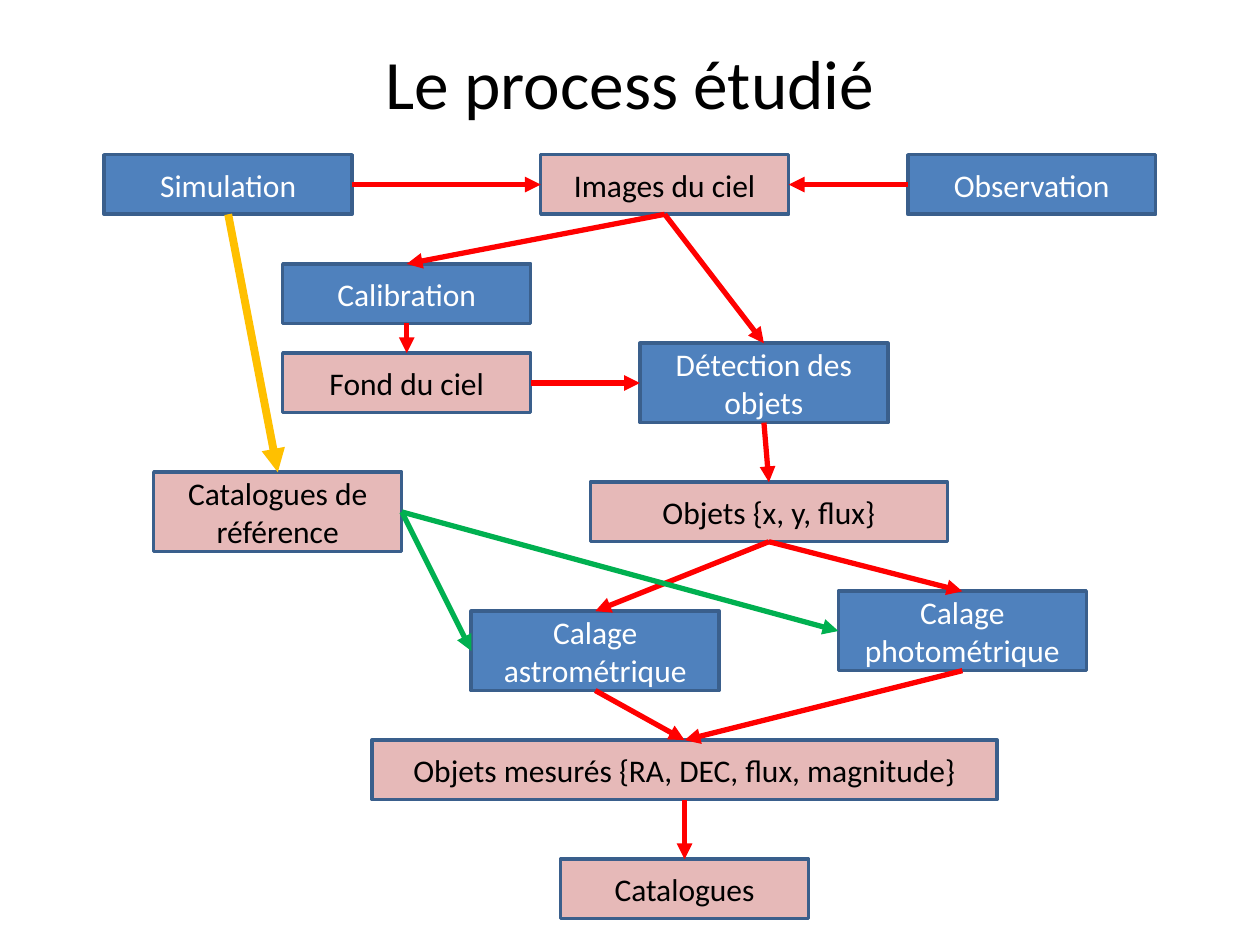
from lxml.etree import SubElement
from pptx import Presentation
from pptx.dml.color import RGBColor
from pptx.enum.shapes import MSO_CONNECTOR, MSO_SHAPE
from pptx.enum.text import MSO_ANCHOR, PP_ALIGN
from pptx.oxml.ns import qn
from pptx.util import Cm, Inches, Pt

BLUE = RGBColor(0x4F, 0x81, 0xBD)
PINK = RGBColor(0xE6, 0xB9, 0xB8)
BORDER = RGBColor(0x3A, 0x5F, 0x8C)
BLACK = RGBColor(0, 0, 0)
WHITE = RGBColor(0xFF, 0xFF, 0xFF)
RED = RGBColor(0xFF, 0, 0)
GREEN = RGBColor(0, 0xB0, 0x50)
GOLD = RGBColor(0xFF, 0xC0, 0)

FONT = "Calibri"
TITLE = "Le process étudié"

# Grid of 0.2 cm cells, counted from the corner of the first box
CELL = Cm(0.2)
GRID_LEFT, GRID_TOP = Cm(2.1), Cm(3.12)
BOX_WIDTH, ONE_LINE, TWO_LINES = 25, 6, 8

# Fill and text colour of each kind of box
STYLES = {"step": (BLUE, WHITE), "data": (PINK, BLACK)}

# name: (text, kind, column, row, columns wide, rows high)
BOXES = {
    "images": ("Images du ciel", "data", 44, 0, BOX_WIDTH, ONE_LINE),
    "calibration": ("Calibration", "step", 18, 11, BOX_WIDTH, ONE_LINE),
    "detection": ("Détection des objets", "step", 54, 19, BOX_WIDTH, TWO_LINES),
    "background": ("Fond du ciel", "data", 18, 20, BOX_WIDTH, ONE_LINE),
    "simulation": ("Simulation", "step", 0, 0, BOX_WIDTH, ONE_LINE),
    "observation": ("Observation", "step", 81, 0, BOX_WIDTH, ONE_LINE),
    "objects": ("Objets {x, y, flux}", "data", 49, 33, 36, ONE_LINE),
    "reference": ("Catalogues de référence", "data", 5, 32, BOX_WIDTH, TWO_LINES),
    "astrometry": ("Calage astrométrique", "step", 37, 46, BOX_WIDTH, TWO_LINES),
    "measured": ("Objets mesurés {RA, DEC, flux, magnitude}", "data",
                 27, 59, 63, ONE_LINE),
    "photometry": ("Calage photométrique", "step", 74, 44, BOX_WIDTH, TWO_LINES),
    "catalogues": ("Catalogues", "data", 46, 71, BOX_WIDTH, ONE_LINE),
}

# Connection sites of a rectangle
TOP, LEFT, BOTTOM, RIGHT = range(4)

# (from box, site, to box, site, colour, width in points)
ARROWS = [
    ("simulation", RIGHT, "images", LEFT, RED, 3),
    ("observation", LEFT, "images", RIGHT, RED, 3),
    ("images", BOTTOM, "calibration", TOP, RED, 3),
    ("images", BOTTOM, "detection", TOP, RED, 3),
    ("calibration", BOTTOM, "background", TOP, RED, 3),
    ("background", RIGHT, "detection", LEFT, RED, 3),
    ("detection", BOTTOM, "objects", TOP, RED, 3),
    ("objects", BOTTOM, "photometry", TOP, RED, 3),
    ("objects", BOTTOM, "astrometry", TOP, RED, 3),
    ("reference", RIGHT, "astrometry", LEFT, GREEN, 3),
    ("reference", RIGHT, "photometry", LEFT, GREEN, 3),
    ("astrometry", BOTTOM, "measured", TOP, RED, 3),
    ("photometry", BOTTOM, "measured", TOP, RED, 3),
    ("measured", BOTTOM, "catalogues", TOP, RED, 3),
    ("simulation", BOTTOM, "reference", TOP, GOLD, 4.5),
]


def write_centred(shape, text, size, colour):
    frame = shape.text_frame
    frame.word_wrap = True
    frame.vertical_anchor = MSO_ANCHOR.MIDDLE
    paragraph = frame.paragraphs[0]
    paragraph.text = text
    paragraph.alignment = PP_ALIGN.CENTER
    font = paragraph.font
    font.name, font.size, font.color.rgb = FONT, Pt(size), colour


def add_box(slide, text, kind, column, row, columns, rows):
    fill, text_colour = STYLES[kind]
    box = slide.shapes.add_shape(
        MSO_SHAPE.RECTANGLE, GRID_LEFT + column * CELL, GRID_TOP + row * CELL,
        columns * CELL, rows * CELL)
    box.shadow.inherit = False
    box.fill.solid()
    box.fill.fore_color.rgb = fill
    box.line.color.rgb = BORDER
    box.line.width = Pt(2)
    write_centred(box, text, 18, text_colour)
    return box


def add_arrow(slide, start, start_site, end, end_site, colour, width):
    arrow = slide.shapes.add_connector(MSO_CONNECTOR.STRAIGHT, 0, 0, 0, 0)
    arrow.begin_connect(start, start_site)
    arrow.end_connect(end, end_site)
    arrow.line.color.rgb = colour
    arrow.line.width = Pt(width)
    SubElement(arrow.line._get_or_add_ln(), qn("a:tailEnd"), type="triangle")
    SubElement(arrow._element.spPr, qn("a:effectLst"))


def main():
    presentation = Presentation()
    presentation.slide_width, presentation.slide_height = Inches(10), Inches(7.5)
    slide = presentation.slides.add_slide(presentation.slide_layouts[6])

    title = slide.shapes.add_textbox(Inches(0.5), Inches(0.3), Inches(9), Inches(0.69))
    write_centred(title, TITLE, 39.6, BLACK)

    boxes = {name: add_box(slide, *box) for name, box in BOXES.items()}
    for start, start_site, end, end_site, colour, width in ARROWS:
        add_arrow(slide, boxes[start], start_site, boxes[end], end_site, colour, width)

    presentation.save("out.pptx")


if __name__ == "__main__":
    main()
